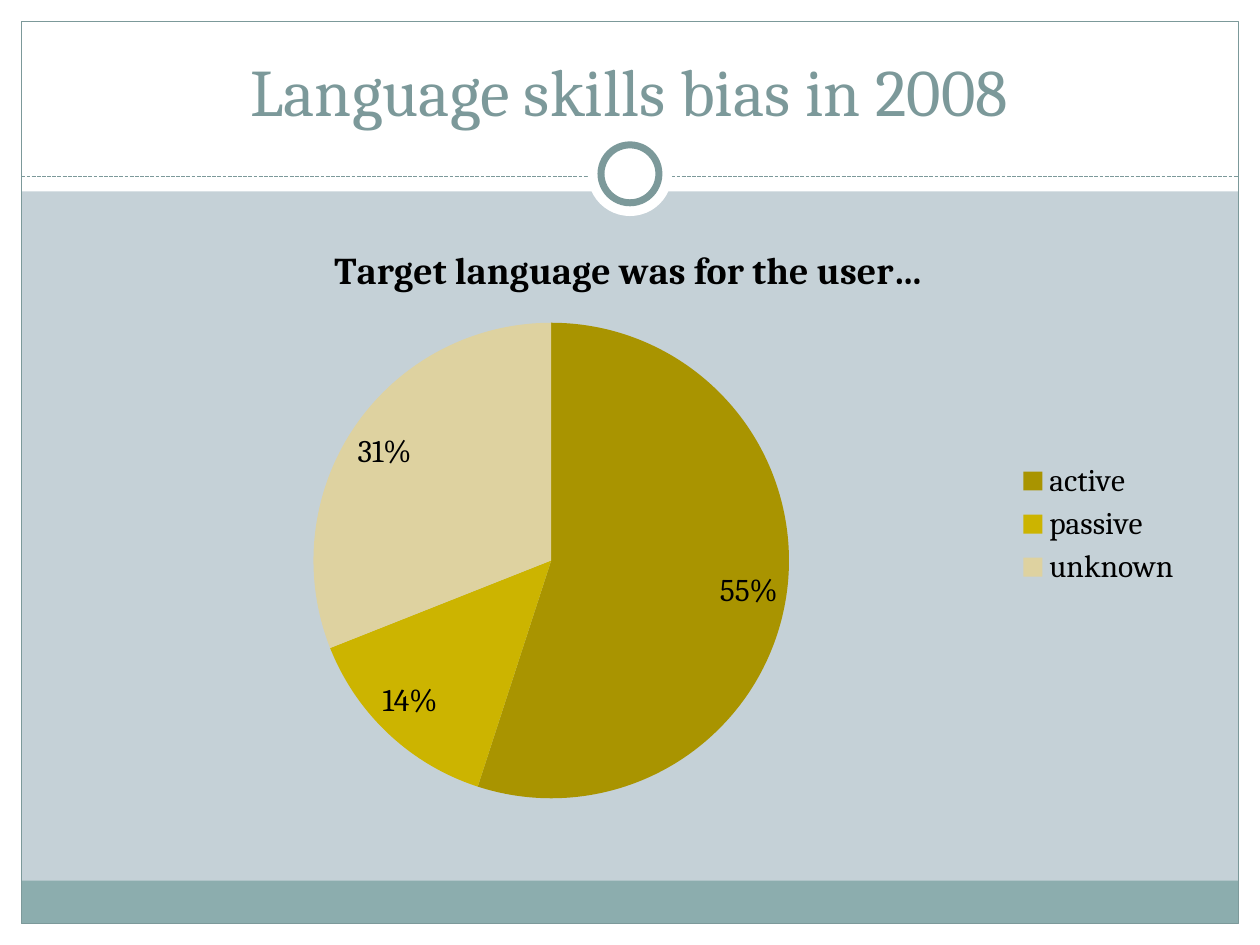
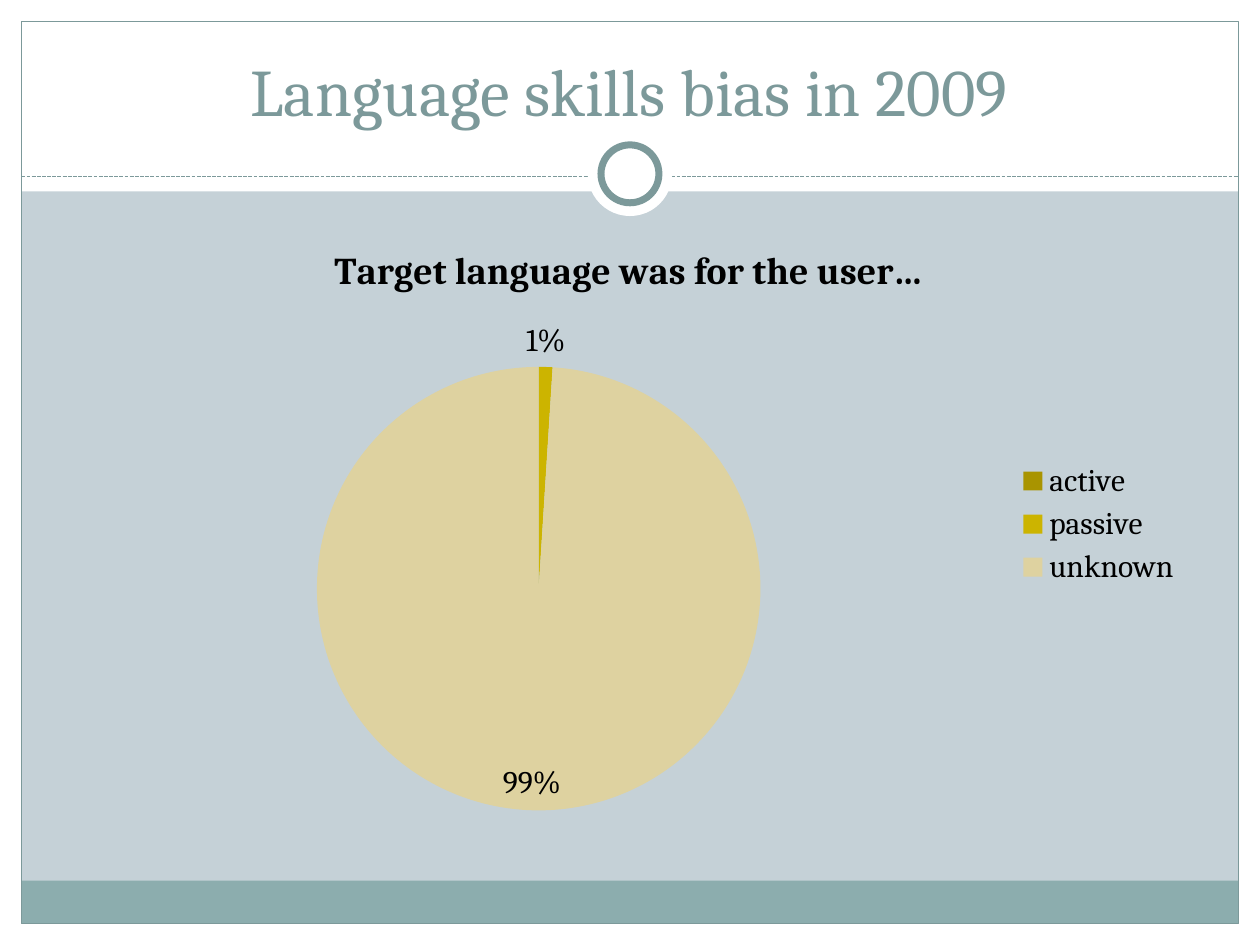
from pptx import Presentation
from pptx.chart.data import CategoryChartData
from pptx.dml.color import RGBColor
from pptx.enum.chart import XL_CHART_TYPE as Kind, XL_LABEL_POSITION as Spot
from pptx.enum.chart import XL_LEGEND_POSITION as Side
from pptx.enum.dml import MSO_LINE as Dash
from pptx.enum.shapes import MSO_CONNECTOR as Link, MSO_SHAPE as Form
from pptx.enum.text import MSO_ANCHOR as Anchor, PP_ALIGN as Align
from pptx.oxml.ns import qn
from pptx.util import Inches, Pt
from lxml.etree import SubElement

WHITE = RGBColor(0xFF, 0xFF, 0xFF)
BLACK = RGBColor(0, 0, 0)
MIST = RGBColor(0xC5, 0xD1, 0xD7)
TEAL = RGBColor(0x8C, 0xAD, 0xAE)
SLATE = RGBColor(0x7C, 0x99, 0x9A)
SLICES = [RGBColor(0xA9, 0x94, 0x00), RGBColor(0xCC, 0xB4, 0x00),
          RGBColor(0xDE, 0xD2, 0xA0)]
FONT = "Cambria"
WIDE, HIGH = 10, 7.5
EDGE = 0.17                # white margin round the slide
RULE = 1.4                 # height of the dashed line
MID = WIDE / 2
INNER = WIDE - 2 * EDGE
LABEL = "Target language was for the user…"
GROUPS = ["active", "passive", "unknown"]
YEARS = {2008: (55, 14, 31), 2009: (0, 1, 99)}

deck = Presentation()
deck.slide_width, deck.slide_height = Inches(WIDE), Inches(HIGH)
layout = deck.slide_layouts[5]
for spare in list(layout.placeholders)[1:]:
    spare.element.getparent().remove(spare.element)
layout.background.fill.solid()
layout.background.fill.fore_color.rgb = MIST
slides = [deck.slides.add_slide(layout) for year in YEARS]
shapes = slides[0].shapes


def draw(form, x, y, w, h, fill=None, line=None):
    """Draw a shape, then hand it to the shared layout."""
    part = shapes.add_shape(form, *map(Inches, (x, y, w, h)))
    part.shadow.inherit = False
    if fill is None:
        part.fill.background()
    else:
        part.fill.solid()
        part.fill.fore_color.rgb = fill
    if line is None:
        part.line.fill.background()
    else:
        part.line.color.rgb = SLATE
        part.line.width = Pt(line)
    layout.shapes.element.append(part.element)


# White margins, bottom band and frame
draw(Form.RECTANGLE, 0, HIGH - EDGE, WIDE, EDGE, WHITE)
draw(Form.RECTANGLE, 0, 0, WIDE, 1.52, WHITE)
for left in (0, WIDE - EDGE):
    draw(Form.RECTANGLE, left, 0, EDGE, HIGH, WHITE)
draw(Form.RECTANGLE, EDGE, 6.99, INNER, 0.34, TEAL)
draw(Form.RECTANGLE, EDGE, EDGE, INNER, HIGH - 2 * EDGE, line=0.75)

# Dashed line
rule = shapes.add_connector(Link.STRAIGHT, Inches(EDGE), Inches(RULE),
                            Inches(WIDE - EDGE), Inches(RULE))
rule.line.color.rgb = SLATE
rule.line.width = Pt(0.75)
rule.line.dash_style = Dash.SQUARE_DOT
SubElement(rule.element.spPr, qn("a:effectLst"))
layout.shapes.element.append(rule.element)

# Ring on the line
for size, line in ((0.67, None), (0.46, 4)):
    draw(Form.OVAL, MID - size / 2, 1.38 - size / 2, size, size, WHITE, line)

# Title place
head = layout.placeholders[0]
head.left, head.top = Inches(0.33), Inches(0.25)
head.width, head.height = Inches(9.33), Inches(0.83)

for slide, (year, shares) in zip(slides, YEARS.items()):
    # Title
    frame = slide.shapes.title.text_frame
    frame.vertical_anchor = Anchor.BOTTOM
    para = frame.paragraphs[0]
    para.alignment = Align.CENTER
    run = para.add_run()
    run.text = f"Language skills bias in {year}"
    run.font.name, run.font.size = FONT, Pt(38)
    run.font.color.rgb = SLATE

    # Pie chart
    data = CategoryChartData()
    data.categories = GROUPS
    data.add_series(LABEL, shares)
    chart = slide.shapes.add_chart(
        Kind.PIE, Inches(0.51), Inches(1.75), Inches(8.97), Inches(4.82),
        data).chart
    chart.font.name, chart.font.size = FONT, Pt(18)
    chart.font.color.rgb = BLACK
    run = chart.chart_title.text_frame.paragraphs[0].add_run()
    run.text = LABEL
    run.font.name, run.font.size, run.font.bold = FONT, Pt(21.6), True
    run.font.color.rgb = BLACK
    chart.has_legend = True
    chart.legend.position = Side.RIGHT
    chart.legend.include_in_layout = False

    # Slices and their labels, with zero left blank
    plot = chart.plots[0]
    for i, tint in enumerate(SLICES):
        fill = plot.series[0].points[i].format.fill
        fill.solid()
        fill.fore_color.rgb = tint
    plot.has_data_labels = True
    tags = plot.data_labels
    tags.show_percentage, tags.show_value = True, False
    tags.number_format, tags.number_format_is_linked = "0%;;", False
    tags.position = Spot.BEST_FIT

deck.save("out.pptx")
